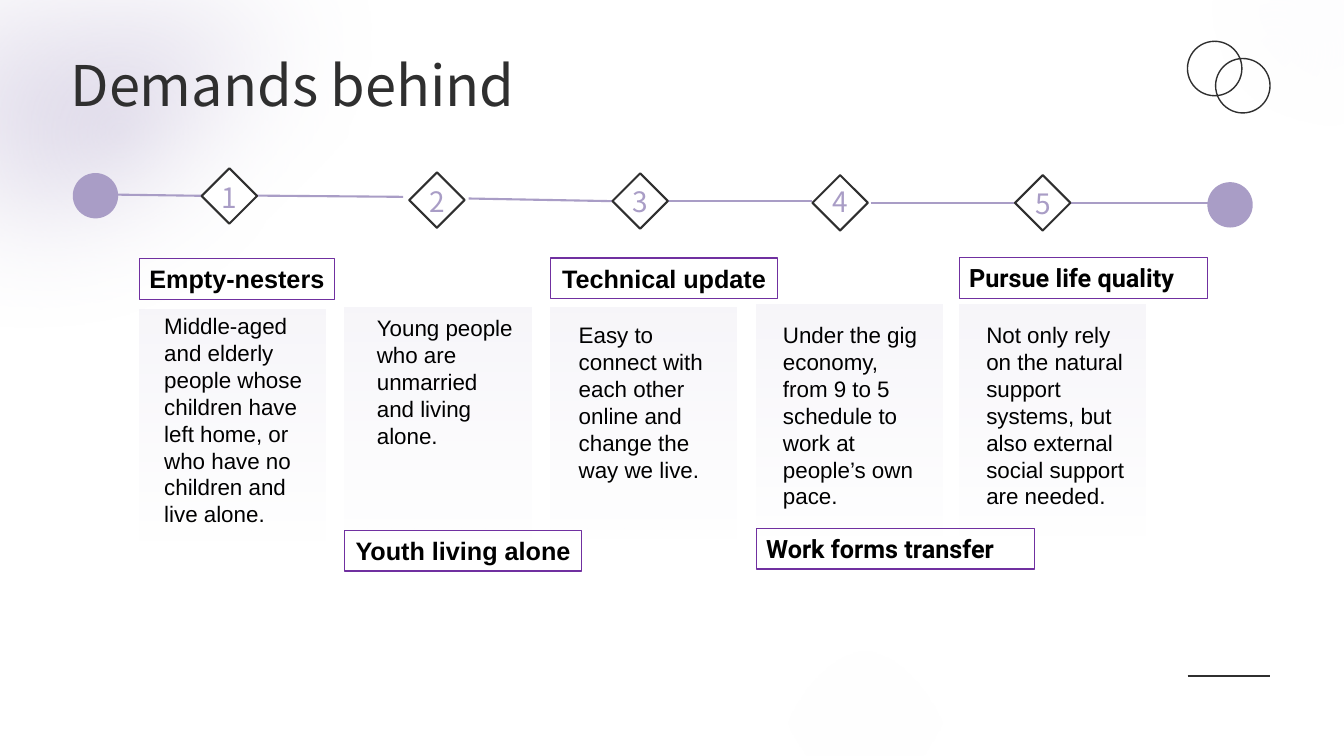
from dataclasses import dataclass
from math import cos, radians, sin

from pptx import Presentation
from pptx.dml.color import RGBColor
from pptx.enum.shapes import MSO_CONNECTOR, MSO_SHAPE
from pptx.enum.text import MSO_ANCHOR, MSO_AUTO_SIZE, PP_ALIGN
from pptx.oxml import parse_xml
from pptx.oxml.ns import nsdecls, qn
from pptx.util import Pt

STRAIGHT = MSO_CONNECTOR.STRAIGHT
RECTANGLE, DIAMOND, ELLIPSE = MSO_SHAPE.RECTANGLE, MSO_SHAPE.DIAMOND, MSO_SHAPE.OVAL
LEFT, CENTER = PP_ALIGN.LEFT, PP_ALIGN.CENTER
TOP, MIDDLE = MSO_ANCHOR.TOP, MSO_ANCHOR.MIDDLE
NO_AUTOFIT = MSO_AUTO_SIZE.NONE
TITLE_ONLY = 5

RADIAL = ('<a:path path="circle"><a:fillToRect l="50000" t="50000" '
          'r="50000" b="50000"/></a:path>')
DOWNWARD = '<a:lin ang="5400000" scaled="0"/>'


@dataclass(frozen=True)
class Theme:
    ink: str = "2F2F2F"
    black: str = "000000"
    white: str = "FFFFFF"
    lilac: str = "A99DC6"
    sand: str = "E3D5C4"
    purple: str = "7030A0"
    heading_font: str = "Noto Sans CJK SC"
    body_font: str = "Arial"
    label_font: str = "Roboto"
    title_size: int = 40
    number_size: int = 20
    label_size: int = 18
    body_size: int = 16


@dataclass(frozen=True)
class Demand:
    label: str
    text: str
    panel: tuple
    text_at: tuple
    label_top: float
    label_width: float
    diamond: tuple
    number_top: float
    font: str = Theme.body_font
    align: int = CENTER


DEMANDS = [
    Demand("Empty-nesters",
           "Middle-aged and elderly people whose children have left home, "
           "or who have no children and live alone.",
           (99.4, 221), (110.2, 219.6), 184.7, 139.7, (144, 120.2), 125.7),
    Demand("Youth living alone",
           "Young people who are unmarried and living alone.",
           (246.2, 219.6), (262.1, 221), 378.7, 169.2, (292.3, 123.1), 128.2),
    Demand("Technical update",
           "Easy to connect with each other online and change the way we live.",
           (393.1, 219.6), (406.3, 226), 184.3, 162.5, (437.5, 123.8), 128.6),
    Demand("Work forms transfer",
           "Under the gig economy, from 9 to 5 schedule to work at people’s own pace.",
           (540.2, 217.4), (552.2, 226), 377.3, 198.7, (580.3, 125.1), 128.2,
           Theme.label_font, LEFT),
    Demand("Pursue life quality",
           "Not only rely on the natural support systems, "
           "but also external social support are needed.",
           (685.2, 217.4), (697.4, 226), 184.1, 177.1, (725, 125.1), 130,
           Theme.label_font, LEFT),
]

TIMELINE = [
    ((80.6, 139), (183.6, 140.4)),
    ((180, 139.7), (288, 140.6)),
    ((334.8, 141.8), (437.8, 143.7)),
    ((477.4, 143.7), (580.3, 143.7)),
    ((622.1, 144.9), (724.3, 144.9)),
    ((764.6, 144.9), (862.6, 144.9)),
]


def write(frame, text, *, font, size, color, bold=False, align=LEFT,
          anchor=TOP, wrap=True):
    frame.word_wrap = wrap
    frame.auto_size = NO_AUTOFIT
    frame.vertical_anchor = anchor
    para = frame.paragraphs[0]
    para.alignment = align
    span = para.add_run()
    span.text = text
    span.font.name = font
    span.font.size = Pt(size)
    span.font.bold = bold
    span.font.color.rgb = RGBColor.from_string(color)


class Painter:
    def __init__(self, page, theme):
        self.page = page
        self.theme = theme

    def style(self, shape, fill=None, line=None, weight=1):
        shape.shadow.inherit = False
        if fill:
            shape.fill.solid()
            shape.fill.fore_color.rgb = RGBColor.from_string(fill)
        else:
            shape.fill.background()
        if line:
            shape.line.color.rgb = RGBColor.from_string(line)
            shape.line.width = Pt(weight)
        else:
            shape.line.fill.background()
        return shape

    def fade(self, shape, color, opacity, direction):
        self.style(shape)
        stops = "".join(
            f'<a:gs pos="{place * 1000}"><a:srgbClr val="{color}">'
            f'<a:alpha val="{alpha * 1000}"/></a:srgbClr></a:gs>'
            for place, alpha in ((0, opacity), (100, 0)))
        gradient = parse_xml(f'<a:gradFill {nsdecls("a")} rotWithShape="1">'
                             f'<a:gsLst>{stops}</a:gsLst>{direction}</a:gradFill>')
        properties = shape._element.spPr
        properties.replace(properties.find(qn("a:noFill")), gradient)

    def shape(self, kind, left, top, width, height, **look):
        box = self.page.shapes.add_shape(kind, Pt(left), Pt(top), Pt(width), Pt(height))
        return self.style(box, **look)

    def glow(self, center, radius, bounds, color):
        left, top, right, bottom = bounds
        outline = []
        for degree in range(0, 360, 30):
            x = center[0] + radius * cos(radians(degree))
            y = center[1] + radius * sin(radians(degree))
            outline.append((Pt(min(max(x, left), right)), Pt(min(max(y, top), bottom))))
        corners = list(dict.fromkeys(outline))
        builder = self.page.shapes.build_freeform(*corners[0])
        builder.add_line_segments(corners[1:], close=True)
        cloud = builder.convert_to_shape()
        self.fade(cloud, color, 40, RADIAL)
        effects = cloud._element.spPr.find(qn("a:effectLst"))
        effects.append(parse_xml(f'<a:softEdge {nsdecls("a")} rad="{Pt(100)}"/>'))

    def panel(self, left, top):
        box = self.shape(RECTANGLE, left, top, 133.2, 175)
        self.fade(box, self.theme.lilac, 10, DOWNWARD)

    def line(self, start, end, color):
        rule = self.page.shapes.add_connector(STRAIGHT, *map(Pt, start + end))
        rule.line.color.rgb = RGBColor.from_string(color)
        rule.line.width = Pt(1.5)
        rule._element.spPr.append(parse_xml(f'<a:effectLst {nsdecls("a")}/>'))

    def text(self, text, left, top, width, height, **look):
        box = self.page.shapes.add_textbox(Pt(left), Pt(top), Pt(width), Pt(height))
        write(box.text_frame, text, **look)

    def title(self, text):
        box = self.page.shapes.title
        box.left, box.top, box.width, box.height = map(Pt, (43.2, 32.4, 359.3, 55.4))
        write(box.text_frame, text, font=self.theme.heading_font,
              size=self.theme.title_size, color=self.theme.ink, anchor=MIDDLE)
        self.page.shapes._spTree.append(box._element)

    def demand(self, number, item):
        theme = self.theme
        self.panel(*item.panel)
        self.text(item.text, *item.text_at, 116.6, 162, font=theme.body_font,
                  size=theme.body_size, color=theme.black)
        label = self.shape(RECTANGLE, item.panel[0], item.label_top, item.label_width,
                           29.2, line=theme.purple, weight=0.75)
        write(label.text_frame, item.label, font=item.font, size=theme.label_size,
              color=theme.black, bold=True, align=item.align,
              wrap=item.align == LEFT)
        self.shape(DIAMOND, *item.diamond, 39.6, 39.6, fill=theme.white,
                   line=theme.ink, weight=1.5)
        self.text(str(number), item.diamond[0] + 5.5, item.number_top, 28.8, 31.7,
                  font=theme.heading_font, size=theme.number_size,
                  color=theme.lilac, align=CENTER)


def main():
    deck = Presentation()
    deck.slide_width, deck.slide_height = Pt(960), Pt(540)
    theme = Theme()
    page = deck.slides.add_slide(deck.slide_layouts[TITLE_ONLY])
    page.background.fill.solid()
    page.background.fill.fore_color.rgb = RGBColor.from_string(theme.white)
    painter = Painter(page, theme)

    painter.glow((983.5, -44.6), 221, (763, -103, 1058, 176), theme.lilac)
    painter.glow((21, -40), 327, (-176, -95, 349, 287), theme.lilac)
    painter.glow((618, 775.5), 391, (261, 384, 976, 619), theme.sand)
    for left, top in ((848.2, 29.5), (868.3, 41.8)):
        painter.shape(ELLIPSE, left, top, 38.9, 38.9, line=theme.ink)
    painter.line((848.4, 483.1), (907.2, 483.1), theme.ink)
    painter.title("Demands behind")

    for start, end in TIMELINE:
        painter.line(start, end, theme.lilac)
    for left, top in ((52, 123.6), (862.4, 130.1)):
        painter.shape(ELLIPSE, left, top, 32.4, 32.4, fill=theme.lilac)
    for number, item in enumerate(DEMANDS, 1):
        painter.demand(number, item)

    deck.save("out.pptx")


if __name__ == "__main__":
    main()
